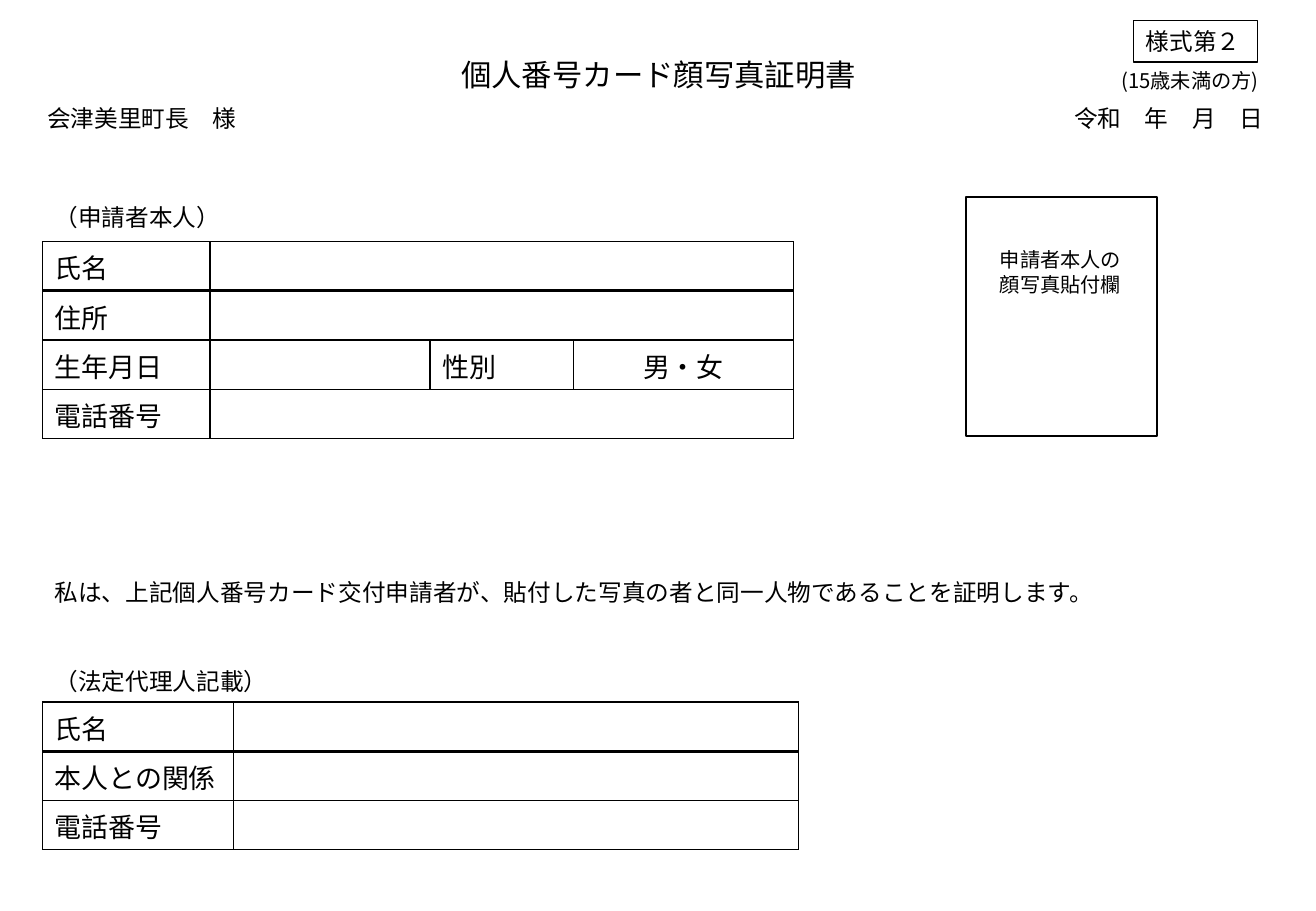
from lxml import etree
from pptx import Presentation
from pptx.dml.color import RGBColor
from pptx.enum.shapes import MSO_SHAPE
from pptx.enum.text import MSO_ANCHOR, MSO_AUTO_SIZE, PP_ALIGN
from pptx.oxml.ns import qn
from pptx.util import Inches, Pt

RECTANGLE = MSO_SHAPE.RECTANGLE
TOP, MIDDLE = MSO_ANCHOR.TOP, MSO_ANCHOR.MIDDLE
NO_AUTOFIT = MSO_AUTO_SIZE.NONE
LEFT, CENTER = PP_ALIGN.LEFT, PP_ALIGN.CENTER

FONT = "Noto Sans CJK JP"
BLACK, WHITE = "000000", "FFFFFF"
ROW_HEIGHT = 0.405


def write(text_frame, text, size, alignment=LEFT):
    """Fill a text frame, naming the font for Latin and East Asian letters."""
    text_frame.text = text
    for paragraph in text_frame.paragraphs:
        paragraph.alignment = alignment
        for run in paragraph.runs:
            run.font.size = Pt(size)
            run.font.color.rgb = RGBColor.from_string(BLACK)
            run.font.name = FONT
            properties = run._r.get_or_add_rPr()
            etree.SubElement(properties, qn("a:ea"), typeface=FONT)


def set_borders(cell, top_width, bottom_width):
    """Draw black borders in points; the sides are always 1 point wide."""
    widths = {"lnL": 1, "lnR": 1, "lnT": top_width, "lnB": bottom_width}
    properties = cell._tc.get_or_add_tcPr()
    for index, (side, width) in enumerate(widths.items()):
        line = etree.Element(qn(f"a:{side}"), w=str(Pt(width)))
        fill = etree.SubElement(line, qn("a:solidFill"))
        etree.SubElement(fill, qn("a:srgbClr"), val=BLACK)
        properties.insert(index, line)


presentation = Presentation()
presentation.slide_width = Inches(10.83)
presentation.slide_height = Inches(7.5)
slide = presentation.slides.add_slide(presentation.slide_layouts[5])

title = slide.shapes.title
title.left, title.top = Inches(3.65), Inches(0.41)
title.width, title.height = Inches(3.54), Inches(0.4)
title.text_frame.auto_size = NO_AUTOFIT
title.text_frame.vertical_anchor = TOP
write(title.text_frame, "個人番号カード顔写真証明書", 18, CENTER)

# Left, top, width, height, font size, text
labels = [
    (0.29, 0.81, 3.54, 0.34, 14, "会津美里町長　様"),
    (8.13, 1.99, 1.22, 0.5, 12, "申請者本人の\n顔写真貼付欄"),
    (0.35, 4.71, 9.06, 0.57, 14,
     "私は、上記個人番号カード交付申請者が、貼付した写真の者と同一人物であることを証明します。"),
    (0.35, 1.62, 6.17, 0.34, 14, "（申請者本人）"),
    (0.35, 5.44, 6.17, 0.34, 14, "（法定代理人記載）"),
    (8.74, 0.81, 1.91, 0.34, 14, "令和　年　月　日"),
    (9.13, 0.51, 1.42, 0.3, 12, "(15歳未満の方)"),
]
for left, top, width, height, size, text in labels:
    label = slide.shapes.add_textbox(Inches(left), Inches(top), Inches(width), Inches(height))
    label.text_frame.word_wrap = True
    write(label.text_frame, text, size)

# Top, column widths, row texts; a row of one text spans the remaining columns
tables = [
    (1.99, [1.38, 1.81, 1.18, 1.81],
     [["氏名"], ["住所"], ["生年月日", "", "性別", "男・女"], ["電話番号"]]),
    (5.78, [1.57, 4.65], [["氏名"], ["本人との関係"], ["電話番号"]]),
]
for top, column_widths, rows in tables:
    frame = slide.shapes.add_table(
        len(rows), len(column_widths), Inches(0.35), Inches(top),
        Inches(sum(column_widths)), Inches(ROW_HEIGHT * len(rows)))
    table = frame.table
    table.first_row = table.horz_banding = False
    for column, width in zip(table.columns, column_widths):
        column.width = Inches(width)
    for row_index, texts in enumerate(rows):
        table.rows[row_index].height = Inches(ROW_HEIGHT)
        for column_index in range(len(column_widths)):
            cell = table.cell(row_index, column_index)
            cell.fill.solid()
            cell.fill.fore_color.rgb = RGBColor.from_string(WHITE)
            set_borders(cell, 2 if row_index == 1 else 1, 2 if row_index == 0 else 1)
            text = texts[column_index] if column_index < len(texts) else ""
            if text:
                write(cell.text_frame, text, 16, CENTER if text == "男・女" else LEFT)
            else:
                cell.margin_top = cell.margin_bottom = Inches(0.03)
        if len(texts) == 1 and len(column_widths) > 2:
            table.cell(row_index, 1).merge(table.cell(row_index, len(column_widths) - 1))

# Left, top, width, height, line width, text
boxes = [
    (9.33, 0.17, 1.02, 0.34, 0.75, "様式第２"),
    (7.95, 1.62, 1.57, 1.97, 1, ""),
]
for left, top, width, height, line_width, text in boxes:
    box = slide.shapes.add_shape(
        RECTANGLE, Inches(left), Inches(top), Inches(width), Inches(height))
    box.shadow.inherit = False
    box.fill.background()
    box.line.color.rgb = RGBColor.from_string(BLACK)
    box.line.width = Pt(line_width)
    box.text_frame.vertical_anchor = MIDDLE
    write(box.text_frame, text, 14)

presentation.save("out.pptx")
